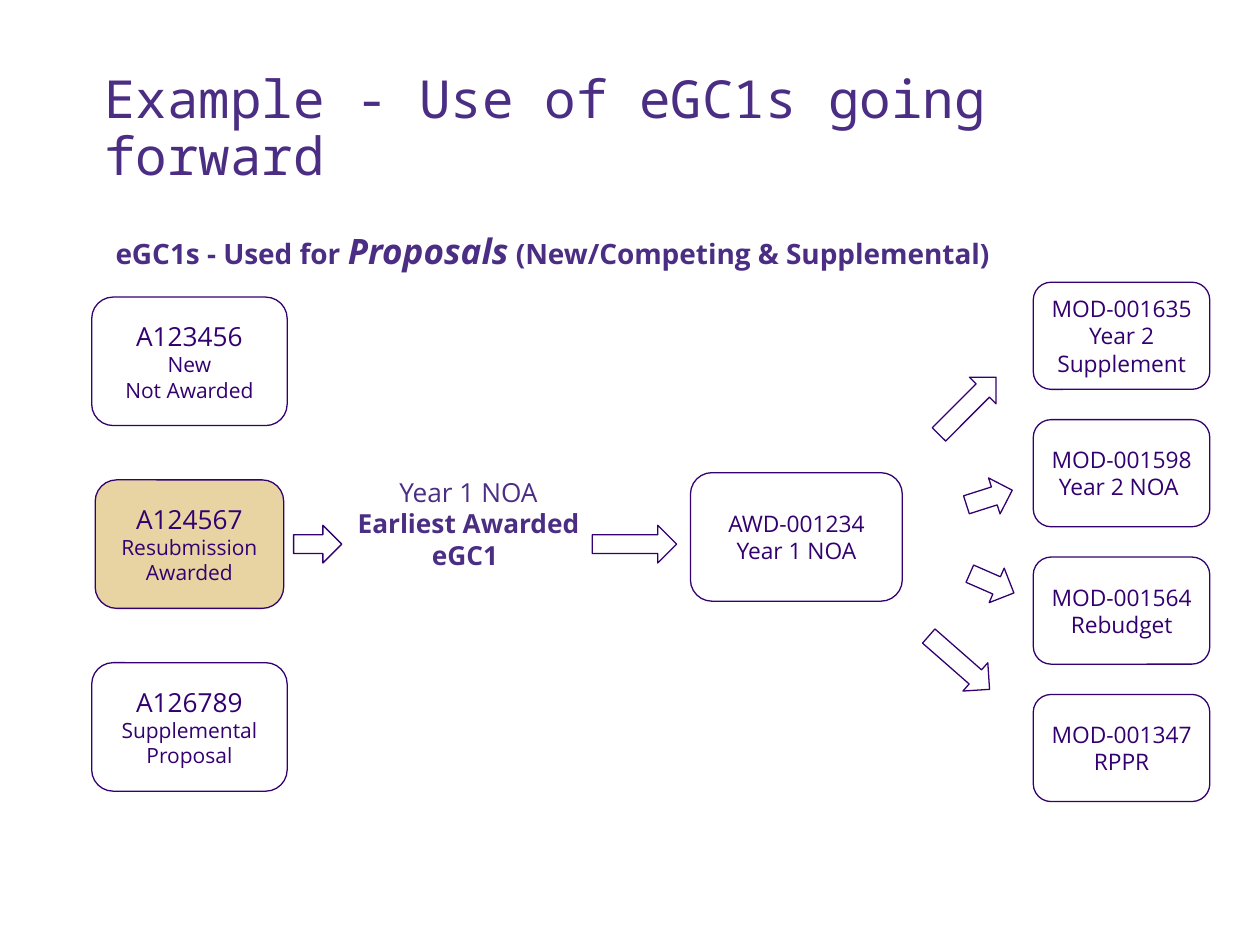
from pptx import Presentation
from pptx.dml.color import RGBColor
from pptx.enum.shapes import MSO_SHAPE as SHAPE
from pptx.enum.text import MSO_ANCHOR as ANCHOR, PP_ALIGN as ALIGN
from pptx.util import Cm, Pt

PURPLE = RGBColor(0x4B, 0x2E, 0x83)
DEEP_PURPLE = RGBColor(0x33, 0x00, 0x6F)
GOLD = RGBColor(0xE8, 0xD3, 0xA2)
WHITE = RGBColor(0xFF, 0xFF, 0xFF)
BODY_FONT = "Open Sans"
TITLE_FONT = "Noto Sans Mono"
INSET = Cm(0.25)


def set_frame(tf, anchor):
    tf.word_wrap = True
    tf.vertical_anchor = anchor
    tf.margin_left = tf.margin_right = tf.margin_top = tf.margin_bottom = INSET


def style(p, size, color, name=BODY_FONT, bold=False):
    p.font.size = Pt(size)
    p.font.name = name
    p.font.color.rgb = color
    p.font.bold = bold


def add_text(s, box, anchor=ANCHOR.TOP):
    tf = s.shapes.add_textbox(*map(Cm, box)).text_frame
    set_frame(tf, anchor)
    return tf


def add_outlined(s, kind, box, fill=WHITE):
    sp = s.shapes.add_shape(kind, *map(Cm, box))
    sp.shadow.inherit = False
    sp.fill.solid()
    sp.fill.fore_color.rgb = fill
    sp.line.color.rgb = DEEP_PURPLE
    sp.line.width = Pt(0.75)
    return sp


def add_card(s, box, lines, sizes, fill=WHITE):
    sp = add_outlined(s, SHAPE.ROUNDED_RECTANGLE, box, fill)
    tf = sp.text_frame
    set_frame(tf, ANCHOR.MIDDLE)
    for i, line in enumerate(lines):
        p = tf.paragraphs[0] if i == 0 else tf.add_paragraph()
        p.text = line
        p.alignment = ALIGN.CENTER
        style(p, sizes[min(i, len(sizes) - 1)], DEEP_PURPLE)


def add_arrow(s, box, rotation=0):
    add_outlined(s, SHAPE.RIGHT_ARROW, box).rotation = rotation


def add_title(s, box):
    p = add_text(s, box, ANCHOR.BOTTOM).paragraphs[0]
    p.text = "Example - Use of eGC1s going forward"
    p.line_spacing = 0.9
    style(p, 30, PURPLE, TITLE_FONT)


def add_subtitle(s, box):
    p = add_text(s, box).paragraphs[0]
    style(p, 16, PURPLE, bold=True)
    for text, emphasis in (
        ("eGC1s - Used for ", False),
        ("Proposals", True),
        (" (New/Competing & Supplemental)", False),
    ):
        r = p.add_run()
        r.text = text
        if emphasis:
            r.font.size = Pt(20)
            r.font.italic = True


def add_proposals(s, box):
    left, top, width, height = box
    card_h = 2.59
    pitch = (height - card_h) / 2
    proposals = (
        (("A123456", "New", "Not Awarded"), WHITE, 0),
        (("A124567", "Resubmission", "Awarded"), GOLD, 0.07),
        (("A126789", "Supplemental Proposal"), WHITE, 0),
    )
    for i, (lines, fill, inset) in enumerate(proposals):
        card = (left + inset, top + i * pitch, width - 2 * inset, card_h)
        add_card(s, card, lines, (15, 12), fill)


def add_award(s, box):
    left, top, width, height = box
    tf = add_text(s, (left + 0.96, top, 5.13, 3.25))
    for p, text, bold in (
        (tf.paragraphs[0], "Year 1 NOA", False),
        (tf.add_paragraph(), "Earliest Awarded eGC1 ", True),
    ):
        p.text = text
        p.alignment = ALIGN.CENTER
        style(p, 15, PURPLE, bold=bold)
    for dx, length in ((0, 0.97), (6.02, 1.7)):
        add_arrow(s, (left + dx, top + 1.24, length, 0.76))
    card_w = 4.27
    card = (left + width - card_w, top + 0.18, card_w, 2.59)
    add_card(s, card, ("AWD-001234", "Year 1 NOA"), (13,))


def add_modifications(s, box):
    left, top, width, height = box
    card_w, card_h = 3.56, 2.16
    pitch = (height - card_h) / 3
    modifications = (
        (("MOD-001635 Year 2 Supplement",), (0.17, 2.11, 1.63), 314.9),
        (("MOD-001598", "Year 2 NOA "), (0.94, 3.96, 0.97), 342.3),
        (("MOD-001564", "Rebudget"), (0.99, 5.69, 0.97), 23.6),
        (("MOD-001347", "RPPR"), (0, 7.29, 1.63), 41.2),
    )
    for i, (lines, (dx, dy, length), rotation) in enumerate(modifications):
        card = (left + width - card_w, top + i * pitch, card_w, card_h)
        add_card(s, card, lines, (13,))
        add_arrow(s, (left + dx, top + dy, length, 0.76), rotation)


def main():
    prs = Presentation()
    prs.slide_width, prs.slide_height = Cm(25.4), Cm(19.05)
    s = prs.slides.add_slide(prs.slide_layouts[6])
    add_title(s, (1.85, 0.33, 22.73, 3.68))
    add_subtitle(s, (2.08, 4.37, 22.3, 1.37))
    add_proposals(s, (1.85, 5.99, 3.94, 9.96))
    add_award(s, (5.92, 9.35, 12.27, 3.25))
    add_modifications(s, (18.52, 5.69, 5.87, 10.47))
    prs.save("out.pptx")


if __name__ == "__main__":
    main()
